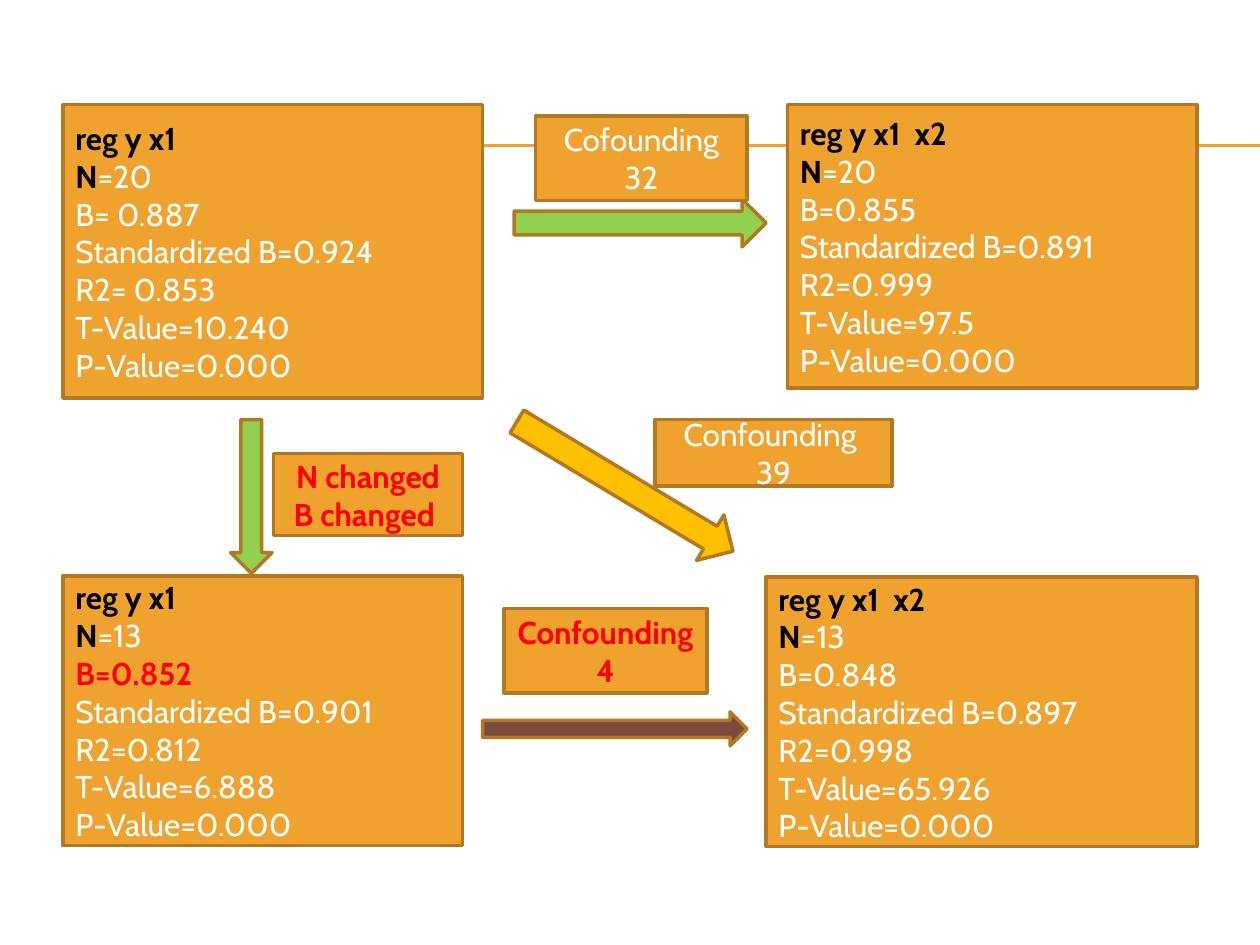
from pptx import Presentation
from pptx.dml.color import RGBColor
from pptx.enum.shapes import MSO_CONNECTOR, MSO_SHAPE
from pptx.enum.text import MSO_ANCHOR, PP_ALIGN
from pptx.oxml.ns import qn
from pptx.util import Inches, Pt

RECTANGLE = MSO_SHAPE.RECTANGLE
RIGHT_ARROW = MSO_SHAPE.RIGHT_ARROW
DOWN_ARROW = MSO_SHAPE.DOWN_ARROW
STRAIGHT = MSO_CONNECTOR.STRAIGHT
MIDDLE = MSO_ANCHOR.MIDDLE
LEFT, CENTER = PP_ALIGN.LEFT, PP_ALIGN.CENTER

ORANGE, BORDER = "F0A22E", "B27822"
GREEN, YELLOW, BROWN = "92D050", "FFC000", "7C4B3B"
BLACK, WHITE, RED = "000000", "FFFFFF", "FF0000"

STATISTICS = ("B", "Standardized B", "R2", "T-Value", "P-Value")

# position, model, N, values of STATISTICS, statistics shown in red
MODELS = [
    ((0.5, 0.83, 3.33, 2.33), "reg y x1", 20,
     (" 0.887", "0.924", " 0.853", "10.240", "0.000"), ()),
    ((6.08, 4.58, 3.42, 2.14), "reg y x1  x2", 13,
     ("0.848", "0.897", "0.998", "65.926", "0.000"), ()),
    ((6.25, 0.83, 3.25, 2.25), "reg y x1  x2", 20,
     ("0.855", "0.891", "0.999", "97.5", "0.000"), ()),
    ((0.5, 4.57, 3.17, 2.14), "reg y x1", 13,
     ("0.852", "0.901", "0.812", "6.888", "0.000"), ("B",)),
]

# position, arrow, fill, rotation
ARROWS = [
    ((3.96, 3.65, 2, 0.42), RIGHT_ARROW, YELLOW, 31),
    ((4.08, 1.58, 2, 0.38), RIGHT_ARROW, GREEN, 0),
    ((1.83, 3.33, 0.33, 1.22), DOWN_ARROW, GREEN, 0),
    ((3.83, 5.65, 2.1, 0.27), RIGHT_ARROW, BROWN, 0),
]

# position, lines, colour, bold
CHANGES = [
    ((5.2, 3.33, 1.88, 0.53), ("Confounding ", "39"), WHITE, False),
    ((4.25, 0.92, 1.68, 0.67), ("Cofounding", "32"), WHITE, False),
    ((2.17, 3.6, 1.5, 0.65), ("N changed", "B changed "), RED, True),
    ((4, 4.83, 1.61, 0.67), ("Confounding 4",), RED, True),
]


def rgb(hex_colour):
    return RGBColor.from_string(hex_colour)


def add_rule(slide, y):
    rule = slide.shapes.add_connector(
        STRAIGHT, Inches(0.56), Inches(y), Inches(10), Inches(y))
    rule.line.color.rgb = rgb(ORANGE)
    rule.line.width = Pt(0.75)
    properties = rule._element.spPr
    properties.append(properties.makeelement(qn("a:effectLst"), {}))


def add_outlined(slide, preset, position, fill):
    shape = slide.shapes.add_shape(preset, *map(Inches, position))
    shape.shadow.inherit = False
    shape.fill.solid()
    shape.fill.fore_color.rgb = rgb(fill)
    shape.line.color.rgb = rgb(BORDER)
    shape.line.width = Pt(2)
    return shape


def add_box(slide, position, paragraphs, alignment):
    """Each paragraph is a list of (text, colour, bold) runs."""
    frame = add_outlined(slide, RECTANGLE, position, ORANGE).text_frame
    frame.word_wrap = True
    frame.vertical_anchor = MIDDLE
    for index, runs in enumerate(paragraphs):
        paragraph = frame.add_paragraph() if index else frame.paragraphs[0]
        paragraph.alignment = alignment
        for text, colour, bold in runs:
            run = paragraph.add_run()
            run.text = text
            run.font.color.rgb = rgb(colour)
            style = {"name": "Cabin", "size": Pt(18), "bold": bold}
            for name, value in style.items():
                setattr(run.font, name, value)


def add_model(slide, position, model, n, values, changed):
    paragraphs = [[(model, BLACK, True)],
                  [("N", BLACK, True), (f"={n}", WHITE, False)]]
    for statistic, value in zip(STATISTICS, values):
        is_changed = statistic in changed
        colour = RED if is_changed else WHITE
        paragraphs.append([(f"{statistic}={value}", colour, is_changed)])
    add_box(slide, position, paragraphs, LEFT)


def main():
    presentation = Presentation()
    presentation.slide_width = Inches(10)
    presentation.slide_height = Inches(7.5)
    slide = presentation.slides.add_slide(presentation.slide_layouts[6])

    for y in (1.15, 1.16):
        add_rule(slide, y)
    for model in MODELS:
        add_model(slide, *model)
    for position, preset, fill, rotation in ARROWS:
        add_outlined(slide, preset, position, fill).rotation = rotation
    for position, lines, colour, bold in CHANGES:
        add_box(slide, position, [[(line, colour, bold)] for line in lines], CENTER)

    presentation.save("out.pptx")


if __name__ == "__main__":
    main()
